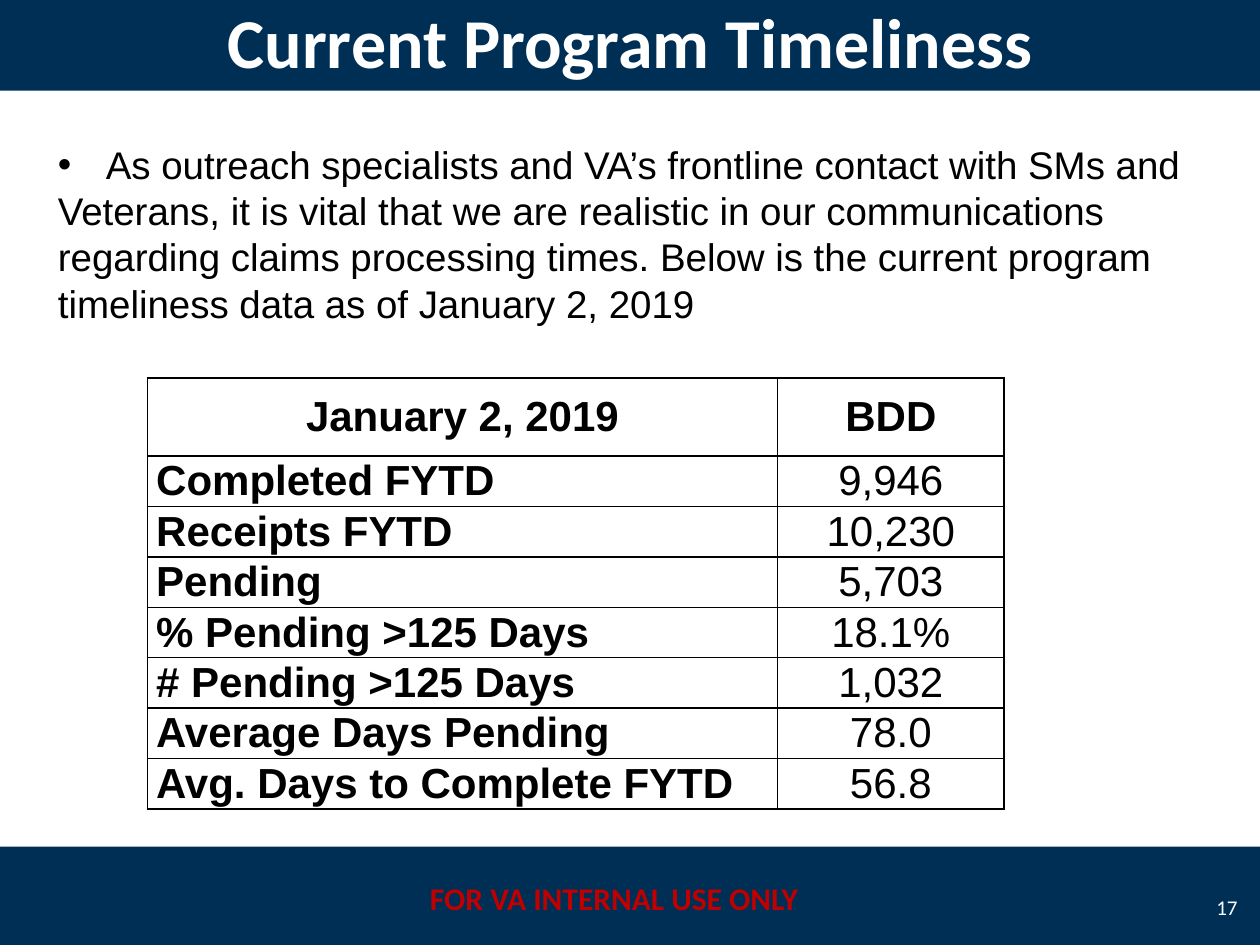
from pptx import Presentation
from pptx.dml.color import RGBColor
from pptx.enum import shapes, text
from pptx.oxml import parse_xml
from pptx.oxml.ns import nsdecls
from pptx.util import Inches, Pt

COLORS = {"navy": "002F56", "red": "C00000", "white": "FFFFFF", "black": "000000"}
WIDTH, HEIGHT = Inches(10), Inches(7.5)
BAND_HEIGHT = 0.8
ALIGN = text.PP_ALIGN
MIDDLE = text.MSO_ANCHOR.MIDDLE

TITLE = "Current Program Timeliness"
INTRO = [
    "As outreach specialists and VA’s frontline contact with SMs and",
    "Veterans, it is vital that we are realistic in our communications regarding "
    "claims processing times. Below is the current program timeliness data as of "
    "January 2, 2019",
]
TIMELINESS = [
    ("January 2, 2019", "BDD"),
    ("Completed FYTD", "9,946"),
    ("Receipts FYTD", "10,230"),
    ("Pending", "5,703"),
    ("% Pending >125 Days", "18.1%"),
    ("# Pending >125 Days", "1,032"),
    ("Average Days Pending", "78.0"),
    ("Avg. Days to Complete FYTD", "56.8"),
]


def place(shape, left, top, width, height):
    shape.left, shape.top = Inches(left), Inches(top)
    shape.width, shape.height = Inches(width), Inches(height)


def write(para, words, size, font="Arial", color="black", bold=False, align=ALIGN.LEFT):
    """Put one formatted run into a paragraph."""
    para.alignment = align
    para.space_before = Pt(0)
    span = para.add_run()
    span.text = words
    span.font.size, span.font.name, span.font.bold = Pt(size), font, bold
    span.font.color.rgb = RGBColor.from_string(COLORS[color])


def add_band(page, top):
    """Draw a full-width band behind everything else."""
    band = page.shapes.add_shape(shapes.MSO_SHAPE.RECTANGLE, 0, Inches(top),
                                 WIDTH, Inches(BAND_HEIGHT))
    band.shadow.inherit = False
    band.fill.solid()
    band.fill.fore_color.rgb = RGBColor.from_string(COLORS["navy"])
    band.line.fill.background()
    page.shapes._spTree.insert(2, band._element)


def add_label(page, words, area, anchor=text.MSO_ANCHOR.TOP, **style):
    box = page.shapes.add_textbox(0, 0, 0, 0)
    place(box, *area)
    box.text_frame.word_wrap = True
    box.text_frame.vertical_anchor = anchor
    write(box.text_frame.paragraphs[0], words, font="Calibri", color=style.pop("color"), **style)


def fill_title(page):
    title = page.shapes.title
    place(title, 0, -0.08, 10, BAND_HEIGHT)
    title.text_frame.auto_size = text.MSO_AUTO_SIZE.NONE
    title.text_frame.vertical_anchor = MIDDLE
    write(title.text_frame.paragraphs[0], TITLE, 40, "Calibri", "white", True, ALIGN.CENTER)


def fill_intro(page):
    body = page.placeholders[1]
    place(body, 0.36, 1.07, 9.5, 1.58)
    frame = body.text_frame
    frame.auto_size = text.MSO_AUTO_SIZE.NONE
    for index, words in enumerate(INTRO):
        para = frame.add_paragraph() if index else frame.paragraphs[0]
        write(para, words, 22)
        # Only the first paragraph carries a bullet
        bullet = "<a:buNone %s/>" if index else '<a:buChar %s char="•"/>'
        indent = 0 if index else Inches(0.38)
        properties = para._p.get_or_add_pPr()
        properties.set("marL", str(indent))
        properties.set("indent", str(-indent))
        properties.append(parse_xml(bullet % nsdecls("a")))


def format_cell(cell, words, bold, align):
    cell.margin_left = cell.margin_right = Inches(0.07)
    cell.margin_top = cell.margin_bottom = 0
    cell.vertical_anchor = MIDDLE
    write(cell.text_frame.paragraphs[0], words, 24, bold=bold, align=align)
    properties = cell._tc.get_or_add_tcPr()
    for side in ("lnL", "lnR", "lnT", "lnB"):
        properties.append(parse_xml(
            f'<a:{side} {nsdecls("a")} w="{Pt(1)}"><a:solidFill>'
            f'<a:srgbClr val="{COLORS["black"]}"/></a:solidFill></a:{side}>'))
    cell.fill.background()


def add_timeliness_table(page):
    table = page.shapes.add_table(len(TIMELINESS), 2, Inches(1.17), Inches(3),
                                  Inches(6.8), Inches(3.42)).table
    table.first_row = table.horz_banding = False
    for column, width in zip(table.columns, (5, 1.8)):
        column.width = Inches(width)
    for r, values in enumerate(TIMELINESS):
        header = r == 0
        table.rows[r].height = Inches(0.62 if header else 0.4)
        for c, words in enumerate(values):
            label = c == 0
            align = ALIGN.LEFT if label and not header else ALIGN.CENTER
            format_cell(table.cell(r, c), words, header or label, align)


def main():
    deck = Presentation()
    deck.slide_width, deck.slide_height = WIDTH, HEIGHT
    page = deck.slides.add_slide(deck.slide_layouts[1])

    # Header and footer bands
    for top in (-0.08, 6.72):
        add_band(page, top)

    # Title, introduction and data
    fill_title(page)
    fill_intro(page)
    add_timeliness_table(page)

    # Footer texts
    add_label(page, "FOR VA INTERNAL USE ONLY", (3.25, 6.93, 3.25, 0.4),
              size=18, color="red", bold=True, align=ALIGN.CENTER)
    add_label(page, "17", (9.5, 7, 0.42, 0.4), MIDDLE,
              size=12, color="white", align=ALIGN.RIGHT)
    deck.save("out.pptx")


if __name__ == "__main__":
    main()
